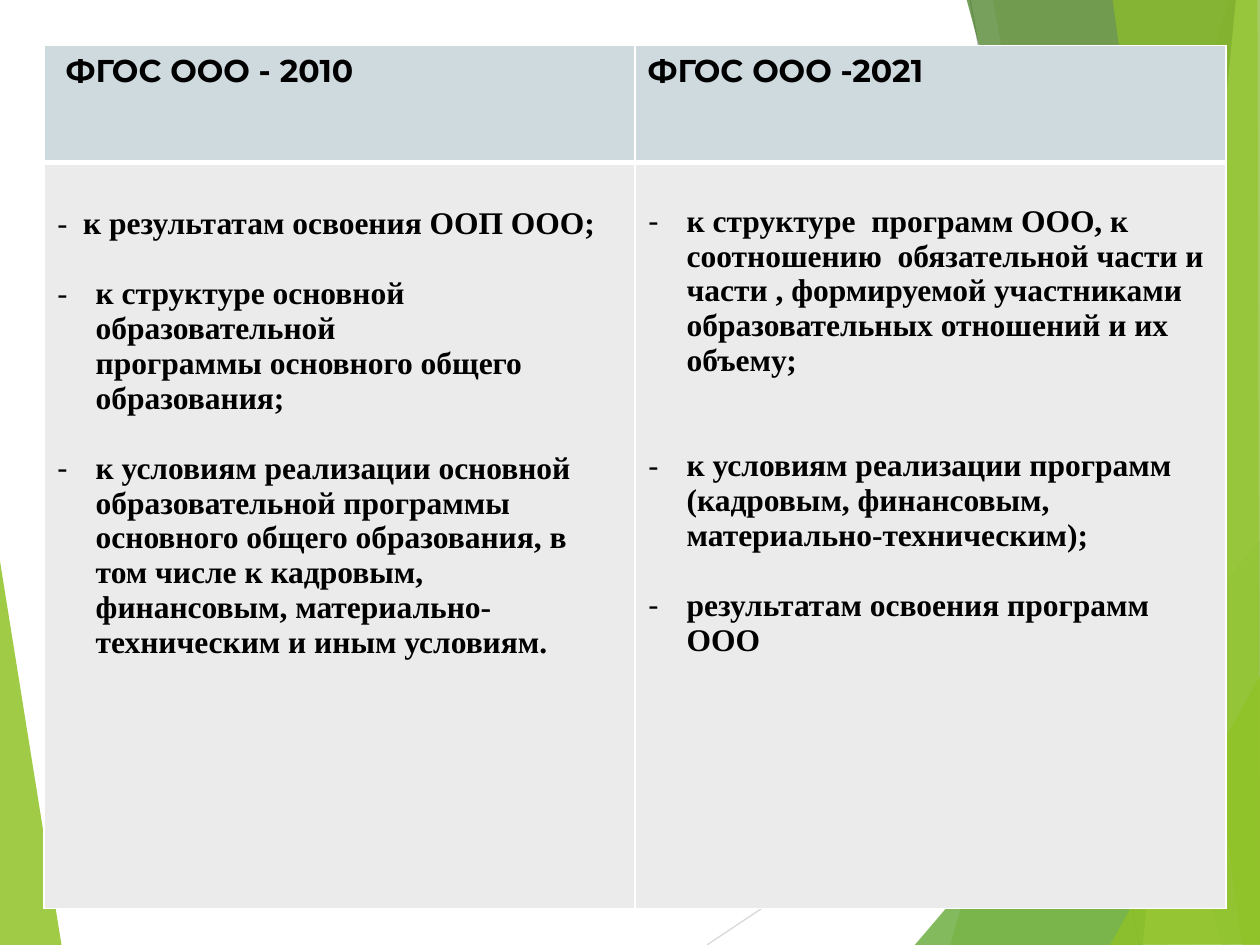
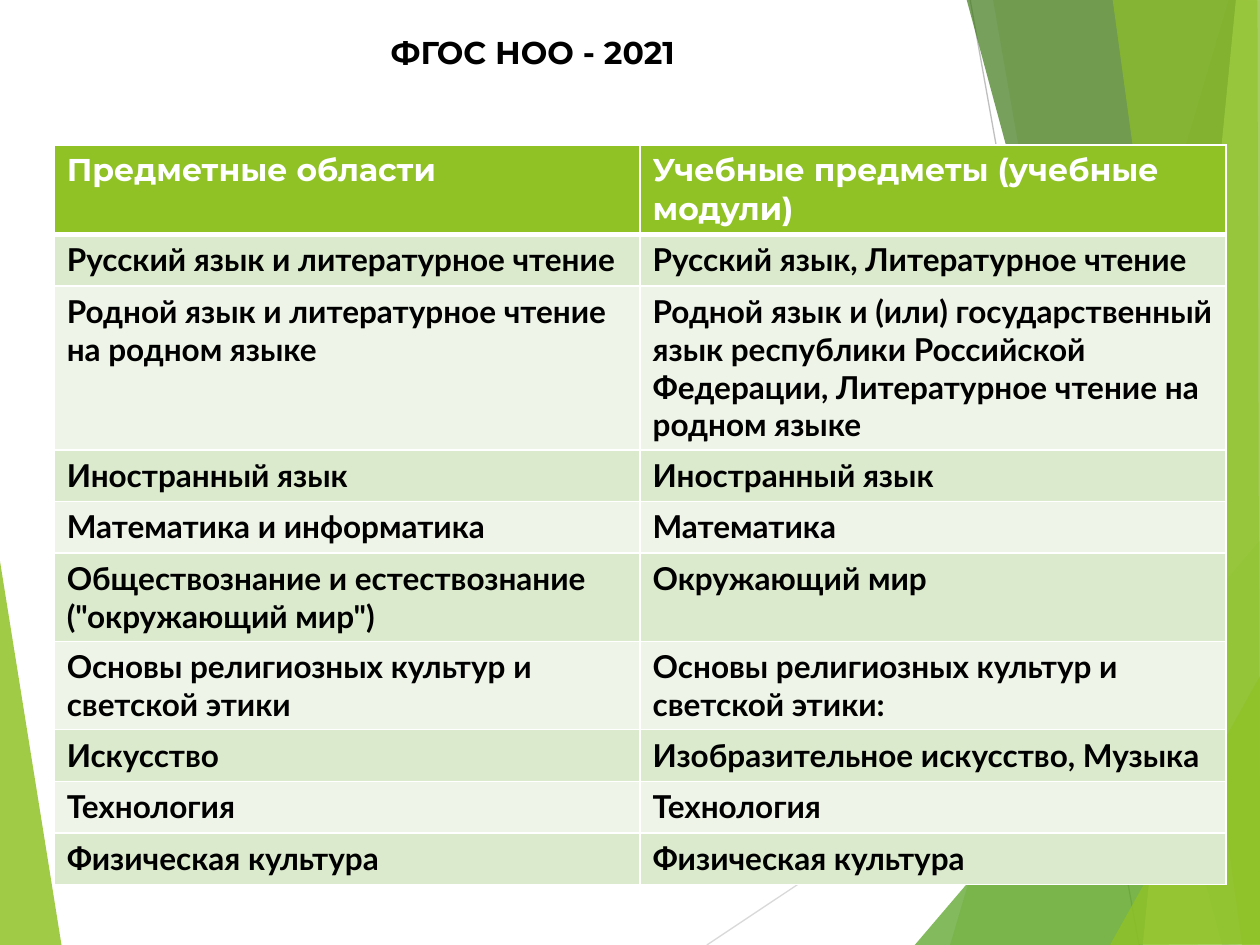
from dataclasses import dataclass

from lxml import etree
from pptx import Presentation
from pptx import util as u
from pptx.dml import color
from pptx.enum import shapes, text
from pptx.oxml import ns


@dataclass(frozen=True)
class Theme:
    heading: str = "Montserrat"
    body: str = "Lato"
    serif: str = "Times New Roman"
    size: int = 18
    ink: str = "000000"
    paper: str = "FFFFFF"
    lime: str = "90C226"
    green: str = "54A021"
    forest: str = "3F7819"
    pale_lime: str = "C0E474"
    ray_light: str = "D9D9D9"
    ray_dark: str = "BFBFBF"
    mist: str = "CFDADF"
    fog: str = "EBEBEB"
    bands: tuple = ("DBE9CD", "EEF4E8")
    rule: float = 1
    header_rule: float = 3


@dataclass(frozen=True)
class Item:
    words: str
    gap: float = 0
    indent: float = 0.31
    bullet: bool = True


THEME = Theme()

RAYS = [
    ((5.61, 7.5), (10.01, 4.57), THEME.ray_light),
    ((7.7, 0), (9.04, 7.5), THEME.ray_dark),
]
LEFT_FACET = ([(-0.01, 4.39), (0.49, 7.51), (-0.01, 7.5)], THEME.lime, 85)
RIGHT_FACETS = [
    ([(9.75, 0), (7.54, 7.5), (10.02, 7.51), (10.01, 0.01)], THEME.lime, 30),
    ([(7.88, -0.01), (9.19, 7.5), (10.01, 7.5), (10.01, -0.01)], THEME.lime, 20),
    ([(7.26, 7.5), (10, 4.29), (10.01, 7.5)], THEME.green, 72),
    ([(7.67, -0.01), (9.7, 7.5), (10.01, 7.49), (10.01, -0.01)], THEME.forest, 70),
    ([(9.81, -0.01), (9.07, 7.5), (10.01, 7.5), (10, -0.01)], THEME.pale_lime, 70),
    ([(8.83, -0.01), (9.86, 7.5), (10, 7.5), (9.98, -0.01)], THEME.lime, 65),
    ([(8.81, 7.5), (10.01, 5.35), (10.01, 7.49)], THEME.lime, 80),
]

REQUIREMENTS_2010 = [
    Item("к результатам освоения ООП ООО;", indent=0.21),
    Item("к структуре основной образовательной", gap=20),
    Item("программы основного общего", bullet=False),
    Item("образования;", bullet=False),
    Item("к условиям реализации основной образовательной программы основного общего "
         "образования, в том числе к кадровым, финансовым, материально-техническим "
         "и иным условиям.", gap=20),
]
REQUIREMENTS_2021 = [
    Item("к структуре  программ ООО, к соотношению  обязательной части и части , "
         "формируемой участниками образовательных отношений и их объему;"),
    Item("к условиям реализации программ (кадровым, финансовым, "
         "материально-техническим);", gap=40),
    Item("результатам освоения программ ООО", gap=20),
]
SUBJECTS = [
    ("Предметные области", "Учебные предметы (учебные модули)"),
    ("Русский язык и литературное чтение", "Русский язык, Литературное чтение"),
    ("Родной язык и литературное чтение на родном языке",
     "Родной язык и (или) государственный язык республики Российской Федерации, "
     "Литературное чтение на родном языке"),
    ("Иностранный язык", "Иностранный язык"),
    ("Математика и информатика", "Математика"),
    ('Обществознание и естествознание ("окружающий мир")', "Окружающий мир"),
    ("Основы религиозных культур и светской этики",
     "Основы религиозных культур и светской этики:"),
    ("Искусство", "Изобразительное искусство, Музыка"),
    ("Технология", "Технология"),
    ("Физическая культура", "Физическая культура"),
]


def rgb(value):
    return color.RGBColor.from_string(value)


class Deck:
    TITLE_ONLY, BLANK = 5, 6

    def __init__(self, theme):
        self.theme = theme
        self.prs = Presentation()
        self.prs.slide_width, self.prs.slide_height = u.Inches(10), u.Inches(7.5)
        self.slide = None

    def new_slide(self, layout):
        self.slide = self.prs.slides.add_slide(self.prs.slide_layouts[layout])
        self.slide.background.fill.solid()
        self.slide.background.fill.fore_color.rgb = rgb(self.theme.paper)
        self.facet(*LEFT_FACET)
        for ray in RAYS:
            self.ray(*ray)
        for facet in RIGHT_FACETS:
            self.facet(*facet)

    def facet(self, corners, fill, opacity):
        points = [(u.Inches(x), u.Inches(y)) for x, y in corners]
        builder = self.slide.shapes.build_freeform(*points[0])
        builder.add_line_segments(points[1:], close=True)
        facet = builder.convert_to_shape()
        facet.shadow.inherit = False
        facet.line.fill.background()
        facet.fill.solid()
        facet.fill.fore_color.rgb = rgb(fill)
        tint = facet._element.spPr.find(".//" + ns.qn("a:srgbClr"))
        etree.SubElement(tint, ns.qn("a:alpha"), val=str(opacity * 1000))

    def ray(self, start, end, stroke):
        ray = self.slide.shapes.add_connector(
            shapes.MSO_CONNECTOR.STRAIGHT, *(u.Inches(v) for v in start + end))
        ray.line.color.rgb = rgb(stroke)
        ray.line.width = u.Pt(0.75)
        etree.SubElement(ray._element.spPr, ns.qn("a:effectLst"))

    def style(self, paragraph, face, ink):
        font = paragraph.font
        font.name, font.size, font.bold = face, u.Pt(self.theme.size), True
        font.color.rgb = rgb(ink)

    def title(self, words, left, top, width, height, inset):
        title = self.slide.shapes.title
        title.left, title.top = u.Inches(left), u.Inches(top)
        title.width, title.height = u.Inches(width), u.Inches(height)
        frame = title.text_frame
        frame.text = words
        frame.margin_left = u.Inches(inset)
        frame.vertical_anchor = text.MSO_ANCHOR.TOP
        frame.paragraphs[0].alignment = text.PP_ALIGN.LEFT
        self.style(frame.paragraphs[0], self.theme.heading, self.theme.ink)

    def table(self, left, top, column_width, row_heights):
        table = self.slide.shapes.add_table(
            len(row_heights), 2, u.Inches(left), u.Inches(top),
            u.Inches(2 * column_width), u.Inches(sum(row_heights))).table
        table.first_row = table.horz_banding = False
        for column in table.columns:
            column.width = u.Inches(column_width)
        for row, height in zip(table.rows, row_heights):
            row.height = u.Inches(height)
        return table

    def paint(self, cell, fill, top=None, bottom=None):
        cell.fill.solid()
        cell.fill.fore_color.rgb = rgb(fill)
        thin = self.theme.rule
        edges = {"L": thin, "R": thin, "T": top or thin, "B": bottom or thin}
        properties = cell._tc.get_or_add_tcPr()
        for place, (side, width) in enumerate(edges.items()):
            edge = etree.Element(ns.qn("a:ln" + side), w=str(u.Pt(width)))
            solid = etree.SubElement(edge, ns.qn("a:solidFill"))
            etree.SubElement(solid, ns.qn("a:srgbClr"), val=self.theme.paper)
            properties.insert(place, edge)

    def header_cell(self, cell, words, fill, ink):
        cell.text = words
        self.style(cell.text_frame.paragraphs[0], self.theme.heading, ink)
        self.paint(cell, fill, bottom=self.theme.header_rule)

    def list_cell(self, cell, items, fill, margin_top):
        cell.margin_top = u.Inches(margin_top)
        frame = cell.text_frame
        frame.text = "\n".join(item.words for item in items)
        for paragraph, item in zip(frame.paragraphs, items):
            self.style(paragraph, self.theme.serif, self.theme.ink)
            paragraph.space_before = u.Pt(item.gap)
            properties = paragraph._p.get_or_add_pPr()
            indent = u.Inches(item.indent)
            properties.set("marL", str(indent))
            if item.bullet:
                properties.set("indent", str(-indent))
                bullet = etree.Element(ns.qn("a:buChar"), char="-")
                face = etree.Element(ns.qn("a:buFont"), typeface=self.theme.body)
                run_defaults = properties.find(ns.qn("a:defRPr"))
                run_defaults.addprevious(face)
                run_defaults.addprevious(bullet)
        self.paint(cell, fill, top=self.theme.header_rule)

    def subject_cell(self, cell, words, row):
        cell.text = words
        self.style(cell.text_frame.paragraphs[0], self.theme.body, self.theme.ink)
        self.paint(cell, self.theme.bands[(row - 1) % 2],
                   top=self.theme.header_rule if row == 1 else None)


def requirements_slide(deck):
    deck.new_slide(deck.BLANK)
    comparison = deck.table(0.35, 0.36, 4.69, [0.93, 5.92])
    standards = [
        (" ФГОС ООО - 2010", REQUIREMENTS_2010, 0.35),
        ("ФГОС ООО -2021", REQUIREMENTS_2021, 0.33),
    ]
    for column, (standard, requirements, margin_top) in enumerate(standards):
        deck.header_cell(comparison.cell(0, column), standard,
                         deck.theme.mist, deck.theme.ink)
        deck.list_cell(comparison.cell(1, column), requirements,
                       deck.theme.fog, margin_top)


def subjects_slide(deck):
    deck.new_slide(deck.TITLE_ONLY)
    deck.title("ФГОС НОО - 2021", 1.38, 0.21, 6.38, 0.4, inset=1.72)
    curriculum = deck.table(0.43, 1.15, 4.65, [0.41] * len(SUBJECTS))
    for row, names in enumerate(SUBJECTS):
        for column, name in enumerate(names):
            cell = curriculum.cell(row, column)
            if row == 0:
                deck.header_cell(cell, name, deck.theme.lime, deck.theme.paper)
            else:
                deck.subject_cell(cell, name, row)


def main():
    deck = Deck(THEME)
    requirements_slide(deck)
    subjects_slide(deck)
    deck.prs.save("out.pptx")


if __name__ == "__main__":
    main()
